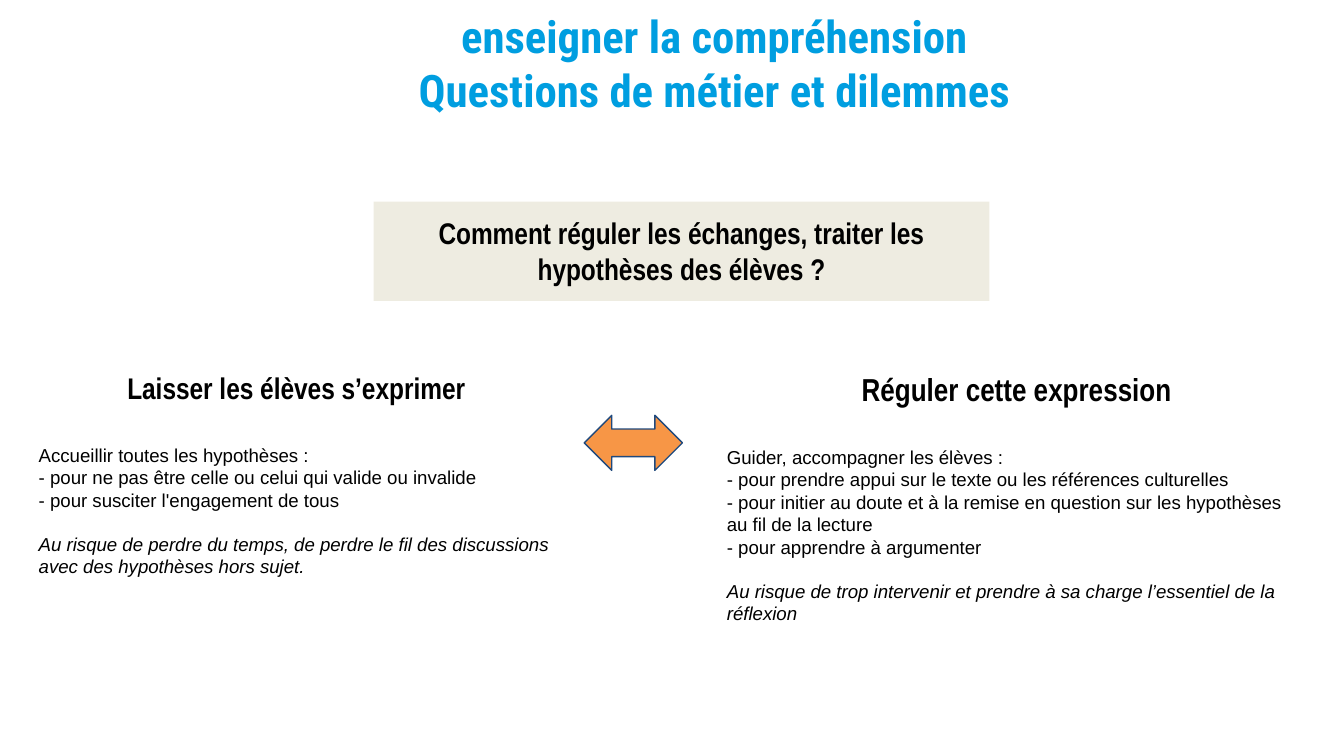
"""Build the slide on regulating exchanges between pupils."""
from dataclasses import dataclass

import pptx
import pptx.dml.color
import pptx.enum.shapes
import pptx.enum.text
import pptx.util

Pt = pptx.util.Pt
Align = pptx.enum.text.PP_ALIGN
Anchor = pptx.enum.text.MSO_ANCHOR
Shape = pptx.enum.shapes.MSO_SHAPE


@dataclass(frozen=True)
class Theme:
    """Colours, fonts, type sizes and spacing of the slide."""
    title_color: str = "009EE0"
    ink: str = "000000"
    panel: str = "EEECE1"
    arrow: str = "F79646"
    arrow_line: str = "1F497D"
    title_font: str = "Roboto Condensed"
    heading_font: str = "Arial Narrow"
    body_font: str = "Arial"
    title_size: float = 24
    heading_size: float = 16
    large_heading_size: float = 17
    body_size: float = 10
    heading_gap: float = 20.5
    risk_gap: float = 11.5
    inset: float = 7.2


def rgb(value):
    """Turn a hex string into a colour."""
    return pptx.dml.color.RGBColor.from_string(value)


class SlideBuilder:
    """Holds the theme and the current page, and adds each kind of element."""

    def __init__(self, page, theme):
        self.page = page
        self.theme = theme

    def place(self, shape, left, top, width, height):
        """Set the position and size of a shape in points."""
        shape.left, shape.top = Pt(left), Pt(top)
        shape.width, shape.height = Pt(width), Pt(height)

    def frame(self, shape, anchor, vertical_inset):
        """Prepare the text frame of a shape."""
        frame = shape.text_frame
        frame.word_wrap = True
        frame.auto_size = pptx.enum.text.MSO_AUTO_SIZE.NONE
        frame.vertical_anchor = anchor
        frame.margin_left = frame.margin_right = Pt(self.theme.inset)
        frame.margin_top = frame.margin_bottom = Pt(vertical_inset)
        return frame

    def style(self, para, font, size, color, bold=False, italic=False, align=Align.LEFT):
        """Set the alignment and font of a paragraph."""
        para.alignment = align
        para.font.name, para.font.size = font, Pt(size)
        para.font.bold, para.font.italic = bold, italic
        para.font.color.rgb = rgb(color)

    def heading(self, para, text, size):
        """Write a centred bold heading."""
        para.text = text
        self.style(para, self.theme.heading_font, size, self.theme.ink, bold=True, align=Align.CENTER)

    def title(self, lines, *bounds):
        """Fill the title placeholder, one paragraph a line."""
        theme = self.theme
        box = self.page.shapes.title
        self.place(box, *bounds)
        frame = self.frame(box, Anchor.MIDDLE, theme.inset / 2)
        frame.text = "\n".join(lines)
        for para in frame.paragraphs:
            para.space_before = Pt(0)
            self.style(para, theme.title_font, theme.title_size, theme.title_color,
                       bold=True, align=Align.CENTER)

    def column(self, heading, size, points, risk, *bounds):
        """Add a heading followed by its points and the risk in italics."""
        theme = self.theme
        box = self.page.shapes.add_textbox(*map(Pt, bounds))
        frame = self.frame(box, Anchor.TOP, theme.inset)
        self.heading(frame.paragraphs[0], heading, size)
        for text in [*points, risk]:
            para = frame.add_paragraph()
            para.text = text
            if text == points[0]:
                para.space_before = Pt(theme.heading_gap)
            elif text == risk:
                para.space_before = Pt(theme.risk_gap)
            self.style(para, theme.body_font, theme.body_size, theme.ink, italic=text == risk)

    def shape(self, kind, fill, *bounds):
        """Add a filled shape without outline or shadow."""
        shape = self.page.shapes.add_shape(kind, *map(Pt, bounds))
        shape.shadow.inherit = False
        shape.fill.solid()
        shape.fill.fore_color.rgb = rgb(fill)
        shape.line.fill.background()
        return shape

    def question(self, text, *bounds):
        """Add the shaded question panel."""
        panel = self.shape(Shape.RECTANGLE, self.theme.panel, *bounds)
        frame = self.frame(panel, Anchor.TOP, self.theme.inset)
        self.heading(frame.paragraphs[0], text, self.theme.heading_size)

    def double_arrow(self, *bounds):
        """Add the outlined two-way arrow."""
        arrow = self.shape(Shape.LEFT_RIGHT_ARROW, self.theme.arrow, *bounds)
        arrow.line.color.rgb = rgb(self.theme.arrow_line)
        arrow.line.width = Pt(0.75)


def main():
    """Build and save the deck."""
    theme = Theme()
    deck = pptx.Presentation()
    deck.slide_width, deck.slide_height = Pt(720), Pt(405)
    page = deck.slides.add_slide(deck.slide_layouts.get_by_name("Title Only"))
    builder = SlideBuilder(page, theme)

    builder.title(["enseigner la compréhension", "Questions de métier et dilemmes"],
                  132.5, 11.5, 500.4, 44)
    builder.column(
        "Laisser les élèves s’exprimer", theme.heading_size,
        ["Accueillir toutes les hypothèses :",
         "- pour ne pas être celle ou celui qui valide ou invalide",
         "- pour susciter l'engagement de tous"],
        "Au risque de perdre du temps, de perdre le fil des discussions avec des hypothèses hors sujet.",
        13.7, 190.8, 290.2, 128.2)
    builder.column(
        "Réguler cette expression", theme.large_heading_size,
        ["Guider, accompagner les élèves :",
         "- pour prendre appui sur le texte ou les références culturelles",
         "- pour initier au doute et à la remise en question sur les hypothèses au fil de la lecture",
         "- pour apprendre à argumenter"],
        "Au risque de trop intervenir et prendre à sa charge l’essentiel de la réflexion",
        382.3, 190.8, 324.7, 116)
    builder.double_arrow(313, 222.5, 52.6, 29.5)
    builder.question("Comment réguler les échanges, traiter les hypothèses des élèves ?",
                     200.2, 108, 329.8, 53.3)
    deck.save("out.pptx")


if __name__ == "__main__":
    main()
